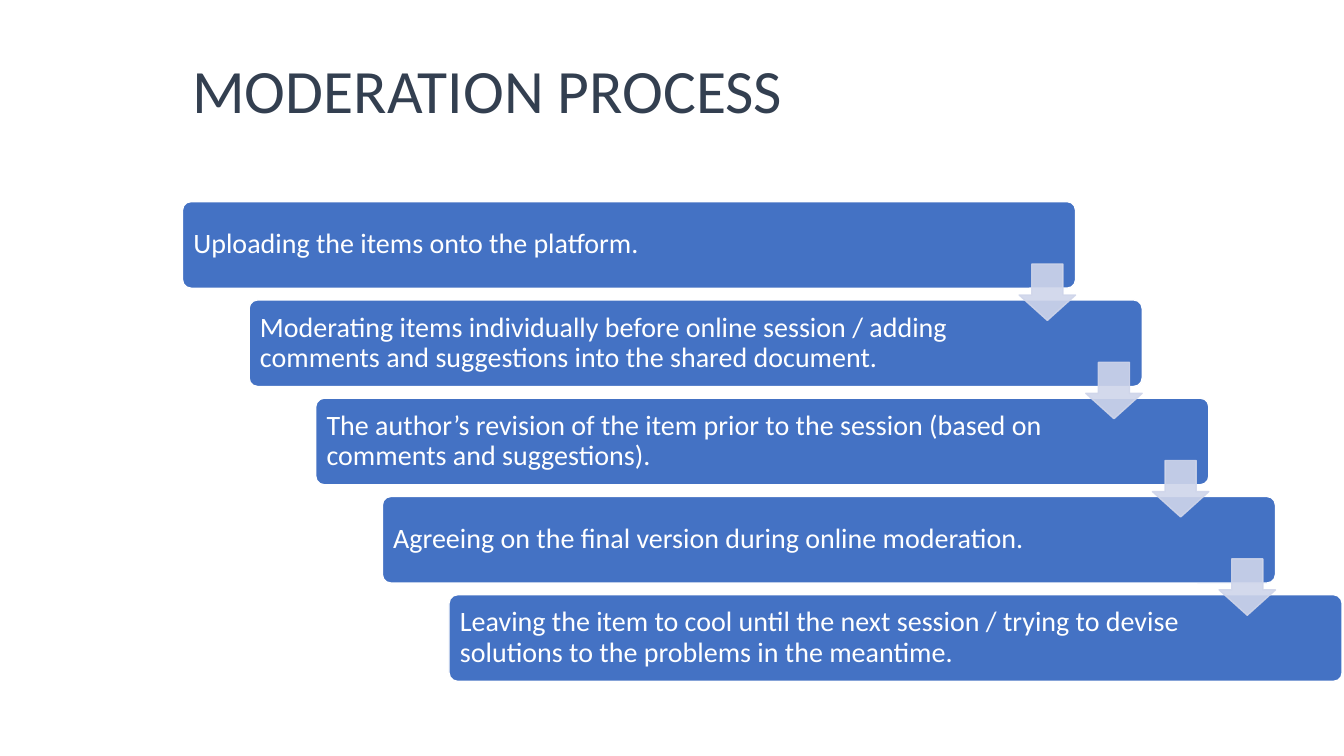
from lxml import etree
from pptx import Presentation
from pptx.dml.color import RGBColor
from pptx.enum.shapes import MSO_SHAPE
from pptx.enum.text import MSO_ANCHOR, PP_ALIGN
from pptx.oxml.ns import qn
from pptx.util import Pt

BAR = MSO_SHAPE.ROUNDED_RECTANGLE
ARROW = MSO_SHAPE.DOWN_ARROW
MIDDLE = MSO_ANCHOR.MIDDLE
LEFT = PP_ALIGN.LEFT

STEPS = [
    "Uploading the items onto the platform.",
    "Moderating items individually before online session / adding "
    "comments and suggestions into the shared document.",
    "The author’s revision of the item prior to the session (based on "
    "comments and suggestions).",
    "Agreeing on the final version during online moderation.",
    "Leaving the item to cool until the next session / trying to devise "
    "solutions to the problems in the meantime.",
]
START_X, START_Y = 130.3, 144
STEP_X, STEP_Y = 47.6, 70.2
BAR_W, BAR_H = 638, 61.9
ARROW_SIZE = 40.3
ARROW_X, ARROW_Y = START_X + BAR_W - ARROW_SIZE, 188.6


def color(code):
    return RGBColor.from_string(code)


def fade(node, percent):
    """Give every colour inside the XML node the stated opacity."""
    for tint in node.iter(qn("a:srgbClr")):
        etree.SubElement(tint, qn("a:alpha")).set("val", str(percent * 1000))


class Deck:
    font = "Calibri"
    ink = "333F50"
    blue = "4472C4"
    pale = "CFD5EA"
    white = "FFFFFF"

    def __init__(self, slide):
        self.slide = slide

    def label(self, shape, text, size, ink, insets):
        frame = shape.text_frame
        frame.text = text
        frame.word_wrap = True
        frame.vertical_anchor = MIDDLE
        left, top, right, bottom = insets
        frame.margin_left = Pt(left)
        frame.margin_top = Pt(top)
        frame.margin_right = Pt(right)
        frame.margin_bottom = Pt(bottom)
        para = frame.paragraphs[0]
        para.alignment = LEFT
        para.line_spacing = 0.9
        para.font.name = self.font
        para.font.size = Pt(size)
        para.font.color.rgb = color(ink)

    def title(self, text, x, y, w, h):
        box = self.slide.shapes.add_textbox(Pt(x), Pt(y), Pt(w), Pt(h))
        self.label(box, text, 44, self.ink, (7.2, 3.6, 7.2, 3.6))

    def shape(self, kind, x, y, w, h, fill, line, adjust):
        shape = self.slide.shapes.add_shape(kind, Pt(x), Pt(y), Pt(w), Pt(h))
        shape.shadow.inherit = False
        for index, value in enumerate(adjust):
            shape.adjustments[index] = value
        shape.fill.solid()
        shape.fill.fore_color.rgb = color(fill)
        shape.line.color.rgb = color(line)
        shape.line.width = Pt(1)
        return shape

    def bar(self, text, x, y):
        bar = self.shape(BAR, x, y, BAR_W, BAR_H, self.blue, self.white, [0.1])
        self.label(bar, text, 20, self.white, (6, 6, 93.5, 6))

    def arrow(self, x, y):
        arrow = self.shape(ARROW, x, y, ARROW_SIZE, ARROW_SIZE,
                           self.pale, self.pale, [0.55, 0.45])
        fade(arrow.element.spPr, 90)


def main():
    show = Presentation()
    show.slide_width, show.slide_height = Pt(960), Pt(540)
    deck = Deck(show.slides.add_slide(show.slide_layouts[6]))
    deck.title("MODERATION PROCESS", START_X, 0, 828, 133.2)
    for i, text in enumerate(STEPS):
        deck.bar(text, START_X + i * STEP_X, START_Y + i * STEP_Y)
    for i in range(len(STEPS) - 1):
        deck.arrow(ARROW_X + i * STEP_X, ARROW_Y + i * STEP_Y)
    show.save("out.pptx")


if __name__ == "__main__":
    main()
